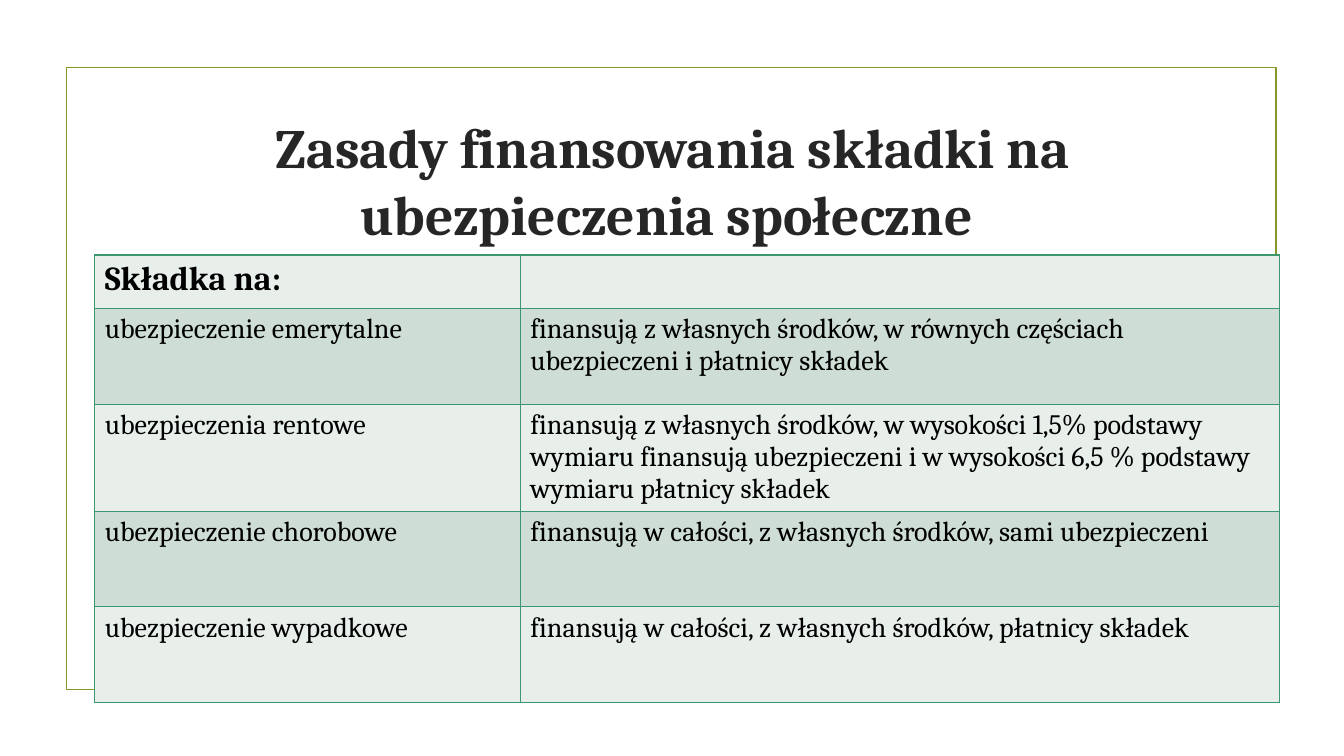
import pptx
import pptx.dml.color
import pptx.enum.shapes
import pptx.enum.text
import pptx.oxml
import pptx.oxml.ns
import pptx.util

COLOURS = {
    "frame": "83992A",
    "title": "262626",
    "text": "000000",
    "border": "3C9770",
    "light": "E8EFEB",
    "dark": "CEDDD5",
}
CONTRIBUTIONS = [
    ("Składka na:", ""),
    ("ubezpieczenie emerytalne",
     "finansują z własnych środków, w równych częściach ubezpieczeni i płatnicy składek"),
    ("ubezpieczenia rentowe",
     "finansują z własnych środków, w wysokości 1,5% podstawy wymiaru finansują "
     "ubezpieczeni i w wysokości 6,5 % podstawy wymiaru płatnicy składek"),
    ("ubezpieczenie chorobowe",
     "finansują w całości, z własnych środków, sami ubezpieczeni"),
    ("ubezpieczenie wypadkowe",
     "finansują w całości, z własnych środków, płatnicy składek"),
]


class SlideBuilder:
    """Draws styled elements on the current slide, with lengths in px."""

    scale = 9144
    font_name = "Cambria"

    def __init__(self, presentation):
        self.slide = presentation.slides.add_slide(presentation.slide_layouts[5])

    def emu(self, *lengths):
        return [pptx.util.Emu(length * self.scale) for length in lengths]

    def colour(self, name):
        return pptx.dml.color.RGBColor.from_string(COLOURS[name])

    def run(self, paragraph, text, size, colour, bold=False):
        run = paragraph.add_run()
        run.text = text
        run.font.name = self.font_name
        run.font.size = pptx.util.Pt(size)
        run.font.bold = bold
        run.font.color.rgb = self.colour(colour)

    def frame(self, left, top, width, height):
        shape = self.slide.shapes.add_shape(
            pptx.enum.shapes.MSO_SHAPE.RECTANGLE, *self.emu(left, top, width, height))
        shape.shadow.inherit = False
        shape.fill.background()
        shape.line.color.rgb = self.colour("frame")
        shape.line.width = pptx.util.Pt(1.25)

    def title(self, text, left, top, width, height):
        shape = self.slide.shapes.title
        shape.left, shape.top, shape.width, shape.height = self.emu(left, top, width, height)
        text_frame = shape.text_frame
        text_frame.word_wrap = True
        text_frame.auto_size = pptx.enum.text.MSO_AUTO_SIZE.NONE
        text_frame.vertical_anchor = pptx.enum.text.MSO_ANCHOR.MIDDLE
        paragraph = text_frame.paragraphs[0]
        paragraph.alignment = pptx.enum.text.PP_ALIGN.CENTER
        self.run(paragraph, text, 39.6, "title", True)

    def border(self, cell):
        properties = cell._tc.get_or_add_tcPr()
        for position, side in enumerate(("lnL", "lnR", "lnT", "lnB")):
            properties.insert(position, pptx.oxml.parse_xml(
                f'<a:{side} {pptx.oxml.ns.nsdecls("a")} w="{pptx.util.Pt(1)}"><a:solidFill>'
                f'<a:srgbClr val="{COLOURS["border"]}"/></a:solidFill></a:{side}>'))

    def table(self, rows, left, top, widths, heights):
        table = self.slide.shapes.add_table(
            len(rows), len(widths),
            *self.emu(left, top, sum(widths), sum(heights))).table
        for column, width in zip(table.columns, self.emu(*widths)):
            column.width = width
        for row, height in zip(table.rows, self.emu(*heights)):
            row.height = height
        for row_index, texts in enumerate(rows):
            header = row_index == 0
            for column_index, text in enumerate(texts):
                cell = table.cell(row_index, column_index)
                cell.fill.solid()
                cell.fill.fore_color.rgb = self.colour("dark" if row_index % 2 else "light")
                self.border(cell)
                if text:
                    self.run(cell.text_frame.paragraphs[0], text,
                             24 if header else 20, "text", header)


def main():
    presentation = pptx.Presentation()
    presentation.slide_width = pptx.util.Inches(13.33)
    presentation.slide_height = pptx.util.Inches(7.5)
    builder = SlideBuilder(presentation)
    builder.frame(66, 67, 1200, 617)
    builder.title("Zasady finansowania składki na ubezpieczenia społeczne ",
                  142, 107, 1050, 143)
    builder.table(CONTRIBUTIONS, 94, 253, [422, 753], [53] + [95] * 4)
    presentation.save("out.pptx")


if __name__ == "__main__":
    main()
